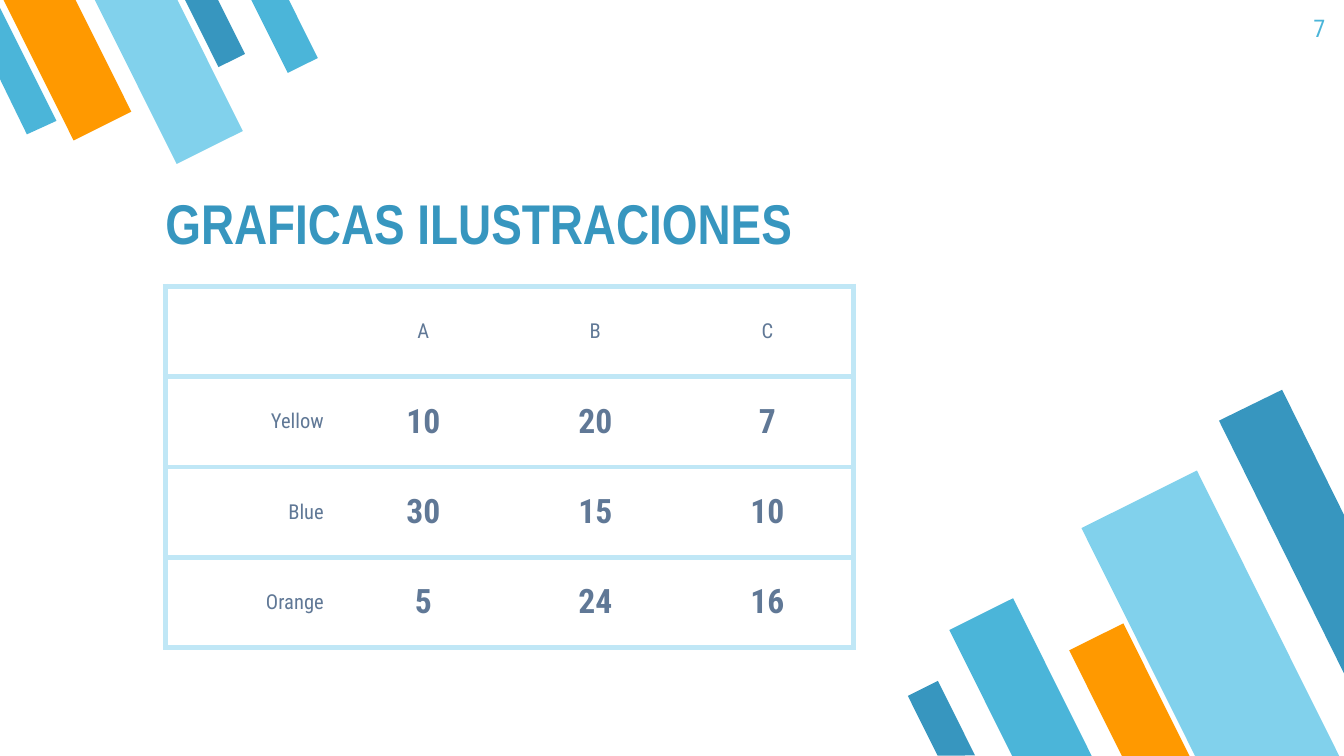
from dataclasses import dataclass

from lxml import etree
from pptx import Presentation
from pptx.dml.color import RGBColor as RGB
from pptx.enum.shapes import MSO_SHAPE as Preset
from pptx.enum.text import MSO_ANCHOR as Anchor, PP_ALIGN as Align
from pptx.oxml.ns import qn
from pptx.util import Inches, Pt


@dataclass(frozen=True)
class Theme:
    dark: str = "3796BF"
    mid: str = "4BB5D9"
    light: str = "81D1EC"
    orange: str = "FF9900"
    border: str = "C0E7F6"
    ink: str = "607896"
    title_font: str = "Arial Narrow"
    body_font: str = "Roboto Condensed"
    title_size: int = 30
    number_size: int = 13
    label_size: int = 11
    value_size: int = 18
    border_width: int = 3


theme = Theme()
prs = Presentation()
prs.slide_width = Inches(10)
prs.slide_height = prs.slide_width * 9 // 16
UNIT = prs.slide_width // 100  # square grid, 100 columns across the slide
slide = prs.slides.add_slide(prs.slide_layouts[5])


def add_run(frame, text, font, size, color, bold=False, align=Align.LEFT):
    paragraph = frame.paragraphs[0]
    paragraph.alignment = align
    run = paragraph.add_run()
    run.text = text
    run.font.name, run.font.size, run.font.bold = font, Pt(size), bold
    run.font.color.rgb = RGB.from_string(color)


def paint(bar, color):
    bar.fill.solid()
    bar.fill.fore_color.rgb = RGB.from_string(color)
    bar.line.fill.background()
    bar.shadow.inherit = False


# Slanted bars in two corners: left, top, width, height in grid units
LOWER_RIGHT, UPPER_LEFT = 153.5, 333.5
bars = [
    (73.3, 45, 5.3, 13.2, LOWER_RIGHT, theme.mid),
    (85.3, 35.9, 9.6, 23.9, LOWER_RIGHT, theme.light),
    (81.8, 46.8, 4.5, 11.1, LOWER_RIGHT, theme.orange),
    (68.8, 50.9, 2.5, 6.2, LOWER_RIGHT, theme.dark),
    (14.9, -0.8, 2.2, 5.6, UPPER_LEFT, theme.dark),
    (2.6, -1.8, 4.8, 11.8, UPPER_LEFT, theme.orange),
    (9.8, -2, 5.5, 13.7, UPPER_LEFT, theme.light),
    (19.9, -1, 2.5, 6.2, UPPER_LEFT, theme.mid),
]
for *box, angle, color in bars:
    bar = slide.shapes.add_shape(
        Preset.FLOWCHART_MANUAL_INPUT, *(round(n * UNIT) for n in box))
    bar.rotation = angle
    bar._element.spPr.find(qn("a:xfrm")).set("flipH", "1")
    paint(bar, color)

# Bars cut off by the slide's edge
cut_bars = [
    ([(95.4, 29), (90.7, 31.3), (100, 50.1), (100, 38.3)], theme.dark),
    ([(2, 10), (4.2, 9), (0, 0.6), (0, 5.9)], theme.mid),
]
for corners, color in cut_bars:
    start, *others = [(x * UNIT, y * UNIT) for x, y in corners]
    outline = slide.shapes.build_freeform(*start)
    outline.add_line_segments(others)
    paint(outline.convert_to_shape(), color)

# Title and page number
title = slide.shapes.title
title.left, title.top, title.width, title.height = (
    round(n * UNIT) for n in (11.3, 12.6, 63, 7.4))
page_number = slide.shapes.add_textbox(
    *(round(n * UNIT) for n in (93.6, 0, 6, 4.3)))
for frame in (title.text_frame, page_number.text_frame):
    frame.word_wrap = True
    frame.margin_left = frame.margin_right = UNIT
    frame.margin_top = frame.margin_bottom = UNIT
title.text_frame.vertical_anchor = Anchor.BOTTOM
add_run(title.text_frame, "GRAFICAS ILUSTRACIONES", theme.title_font,
        theme.title_size, theme.dark, bold=True)
add_run(page_number.text_frame, "7", theme.body_font, theme.number_size,
        theme.mid, align=Align.RIGHT)

# Table of values
records = [
    ("", "A", "B", "C"),
    ("Yellow", "10", "20", "7"),
    ("Blue", "30", "15", "10"),
    ("Orange", "5", "24", "16"),
]
last_column = len(records[0]) - 1
table = slide.shapes.add_table(
    len(records), len(records[0]),
    *(round(n * UNIT) for n in (12.3, 21.3, 51.2, 26.9))).table
table.first_row = table.horz_banding = False

for r, record in enumerate(records):
    for c, text in enumerate(record):
        cell = table.cell(r, c)
        cell.vertical_anchor = Anchor.MIDDLE
        cell.margin_left = cell.margin_right = UNIT
        cell.margin_top = cell.margin_bottom = round(0.7 * UNIT)
        cell.fill.background()
        if text:
            is_value = r > 0 and c > 0
            add_run(cell.text_frame, text, theme.body_font,
                    theme.value_size if is_value else theme.label_size,
                    theme.ink, bold=is_value,
                    align=Align.CENTER if c else Align.RIGHT)
        # Rules run between rows and round the outside, not between columns
        sides = {"L": c == 0, "R": c == last_column, "T": True, "B": True}
        for place, (side, visible) in enumerate(sides.items()):
            edge = etree.Element(qn(f"a:ln{side}"))
            if visible:
                edge.set("w", str(Pt(theme.border_width)))
                fill = etree.SubElement(edge, qn("a:solidFill"))
                etree.SubElement(fill, qn("a:srgbClr"), val=theme.border)
            else:
                etree.SubElement(edge, qn("a:noFill"))
            cell._tc.get_or_add_tcPr().insert(place, edge)

prs.save("out.pptx")
